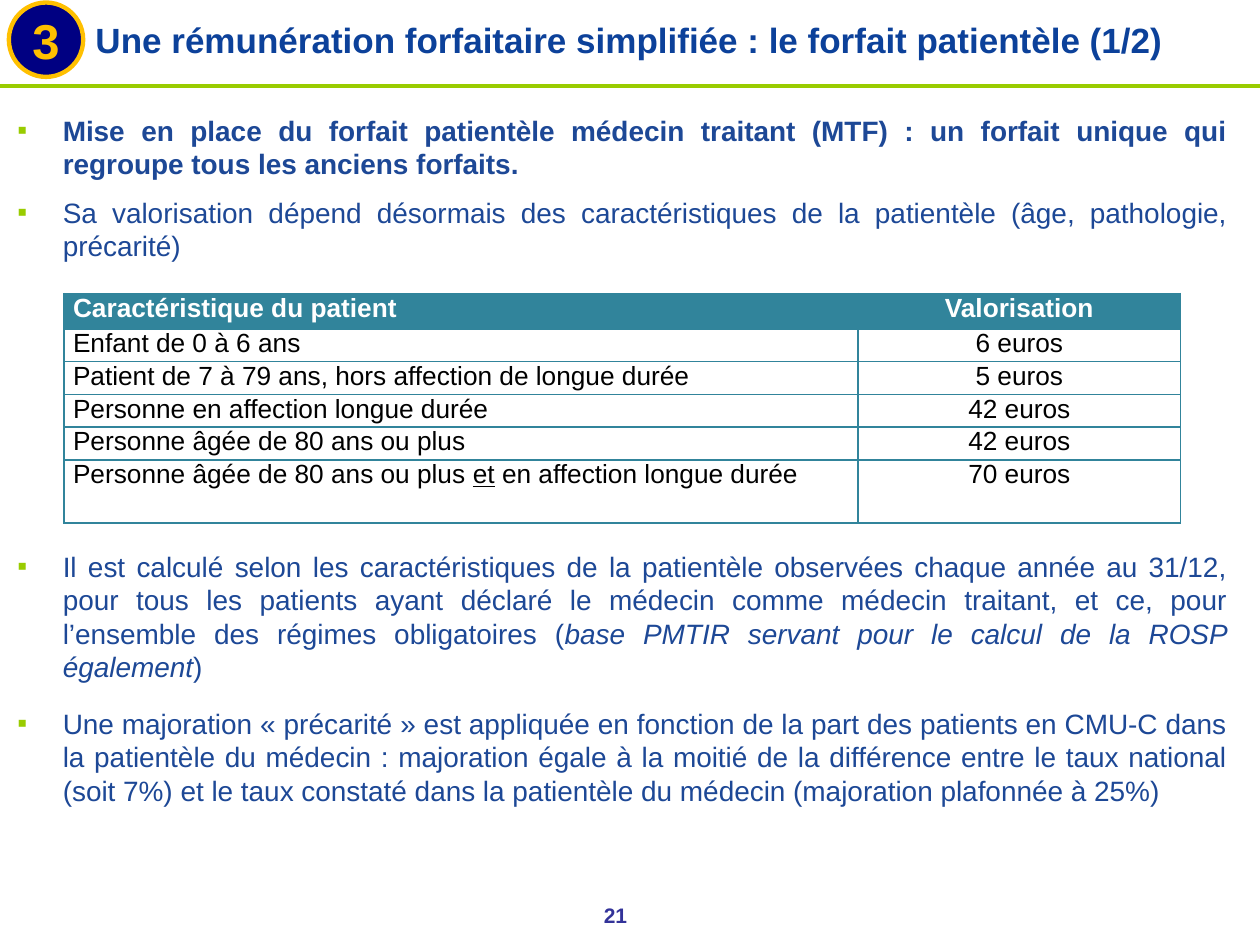
from lxml.etree import SubElement
from pptx import Presentation
from pptx.dml.color import RGBColor
from pptx.enum.shapes import MSO_CONNECTOR, MSO_SHAPE
from pptx.enum.text import MSO_ANCHOR, PP_ALIGN
from pptx.oxml.ns import qn
from pptx.util import Inches, Pt

COLORS = {
    "title": "0C419A",
    "body": "1D4896",
    "green": "99CC00",
    "navy": "000082",
    "gold": "FFC000",
    "teal": "31849B",
    "number": "333399",
    "black": "000000",
    "white": "FFFFFF",
}

UPPER_POINTS = [
    [("Mise en place du forfait patientèle médecin traitant (MTF) : un forfait unique "
      "qui regroupe tous les anciens forfaits.", {"bold": True})],
    [("Sa valorisation dépend désormais des caractéristiques de la patientèle "
      "(âge, pathologie, précarité)", {})],
]
LOWER_POINTS = [
    [("Il est calculé selon les caractéristiques de la patientèle observées chaque année "
      "au 31/12, pour tous les patients ayant déclaré le médecin comme médecin traitant, "
      "et ce, pour l’ensemble des régimes obligatoires (", {}),
     ("base PMTIR servant pour le calcul de la ROSP également", {"italic": True}),
     (")", {})],
    [("Une majoration « précarité » est appliquée en fonction de la part des patients "
      "en CMU-C dans la patientèle du médecin : majoration égale à la moitié de la "
      "différence entre le taux national (soit 7%) et le taux constaté dans la patientèle "
      "du médecin (majoration plafonnée à 25%)", {})],
]
RATES = [
    ([("Caractéristique du patient", {})], "Valorisation"),
    ([("Enfant de 0 à 6 ans", {})], "6 euros"),
    ([("Patient de 7 à 79 ans, hors affection de longue durée", {})], "5 euros"),
    ([("Personne en affection longue durée", {})], "42 euros"),
    ([("Personne âgée de 80 ans ou plus", {})], "42 euros"),
    ([("Personne âgée de 80 ans ou plus ", {}), ("et", {"underline": True}),
      (" en affection longue durée", {})], "70 euros"),
]


class SlideBuilder:
    font_name = "Arial"

    def __init__(self, slide):
        self.slide = slide

    def color(self, name):
        return RGBColor.from_string(COLORS[name])

    def area(self, left, top, width, height):
        return Inches(left), Inches(top), Inches(width), Inches(height)

    def add_spans(self, para, spans, size, color, bold=False):
        for text, style in spans:
            span = para.add_run()
            span.text = text
            font = span.font
            font.name = self.font_name
            font.size = Pt(size)
            font.color.rgb = self.color(color)
            font.bold = style.get("bold", bold)
            font.italic = style.get("italic", False)
            font.underline = style.get("underline", False)

    def frame(self, left, top, width, height):
        box = self.slide.shapes.add_textbox(*self.area(left, top, width, height))
        box.text_frame.word_wrap = True
        return box.text_frame

    def label(self, place, text, size, color, align=PP_ALIGN.LEFT):
        frame = self.frame(*place)
        frame.vertical_anchor = MSO_ANCHOR.MIDDLE
        para = frame.paragraphs[0]
        para.alignment = align
        self.add_spans(para, [(text, {})], size, color, bold=True)

    def bullets(self, place, points, gap):
        frame = self.frame(*place)
        for index, spans in enumerate(points):
            para = frame.add_paragraph() if index else frame.paragraphs[0]
            para.alignment = PP_ALIGN.JUSTIFY
            para.space_before = Pt(gap if index else 0)
            properties = para._p.get_or_add_pPr()
            properties.set("marL", str(Inches(0.36)))
            properties.set("indent", str(Inches(-0.36)))
            bullet_color = SubElement(properties, qn("a:buClr"))
            SubElement(bullet_color, qn("a:srgbClr"), val=COLORS["green"])
            SubElement(properties, qn("a:buFont"), typeface=self.font_name)
            SubElement(properties, qn("a:buChar"), char="▪")
            self.add_spans(para, spans, 16, "body")

    def rule(self, top):
        line = self.slide.shapes.add_connector(
            MSO_CONNECTOR.STRAIGHT, Inches(0), Inches(top), Inches(10), Inches(top))
        line.line.color.rgb = self.color("green")
        line.line.width = Pt(2.25)
        SubElement(line._element.spPr, qn("a:effectLst"))

    def badge(self, place, text):
        circle = self.slide.shapes.add_shape(MSO_SHAPE.OVAL, *self.area(*place))
        circle.shadow.inherit = False
        circle.fill.solid()
        circle.fill.fore_color.rgb = self.color("navy")
        circle.line.color.rgb = self.color("gold")
        circle.line.width = Pt(2.5)
        frame = circle.text_frame
        frame.word_wrap = False
        frame.vertical_anchor = MSO_ANCHOR.MIDDLE
        para = frame.paragraphs[0]
        para.alignment = PP_ALIGN.CENTER
        self.add_spans(para, [(text, {})], 28, "gold", bold=True)

    def cell(self, cell, spans, align, header):
        properties = cell._tc.get_or_add_tcPr()
        for side in ("lnL", "lnR", "lnT", "lnB"):
            border = SubElement(properties, qn(f"a:{side}"), w=str(Pt(1)))
            fill = SubElement(border, qn("a:solidFill"))
            SubElement(fill, qn("a:srgbClr"), val=COLORS["teal"])
        cell.fill.solid()
        cell.fill.fore_color.rgb = self.color("teal" if header else "white")
        cell.margin_left = cell.margin_right = Inches(0.07)
        cell.margin_top = cell.margin_bottom = 0
        para = cell.text_frame.paragraphs[0]
        para.alignment = align
        self.add_spans(para, spans, 15, "white" if header else "black", bold=header)

    def table(self, place, widths, heights, rows):
        table = self.slide.shapes.add_table(len(rows), len(widths), *self.area(*place)).table
        for column, width in zip(table.columns, widths):
            column.width = Inches(width)
        for index, (height, (patient, rate)) in enumerate(zip(heights, rows)):
            table.rows[index].height = Inches(height)
            header = index == 0
            self.cell(table.cell(index, 0), patient, PP_ALIGN.LEFT, header)
            self.cell(table.cell(index, 1), [(rate, {})], PP_ALIGN.CENTER, header)


def main():
    deck = Presentation()
    deck.slide_width, deck.slide_height = Inches(10), Inches(7.5)
    page = SlideBuilder(deck.slides.add_slide(deck.slide_layouts[6]))
    page.rule(0.68)
    page.label((0.66, 0.02, 9.34, 0.58),
               "Une rémunération forfaitaire simplifiée : le forfait patientèle (1/2)",
               20, "title")
    page.bullets((0.04, 0.85, 9.8, 1.3), UPPER_POINTS, 8.5)
    page.bullets((0.04, 4.31, 9.8, 2.2), LOWER_POINTS, 13)
    page.label((4.61, 7.14, 0.55, 0.24), "21", 12, "number", PP_ALIGN.CENTER)
    page.badge((0.07, 0.02, 0.59, 0.59), "3")
    page.table((0.51, 2.33, 8.86, 1.82), [6.3, 2.56], [0.28] + [0.26] * 4 + [0.5], RATES)
    deck.save("out.pptx")


if __name__ == "__main__":
    main()
